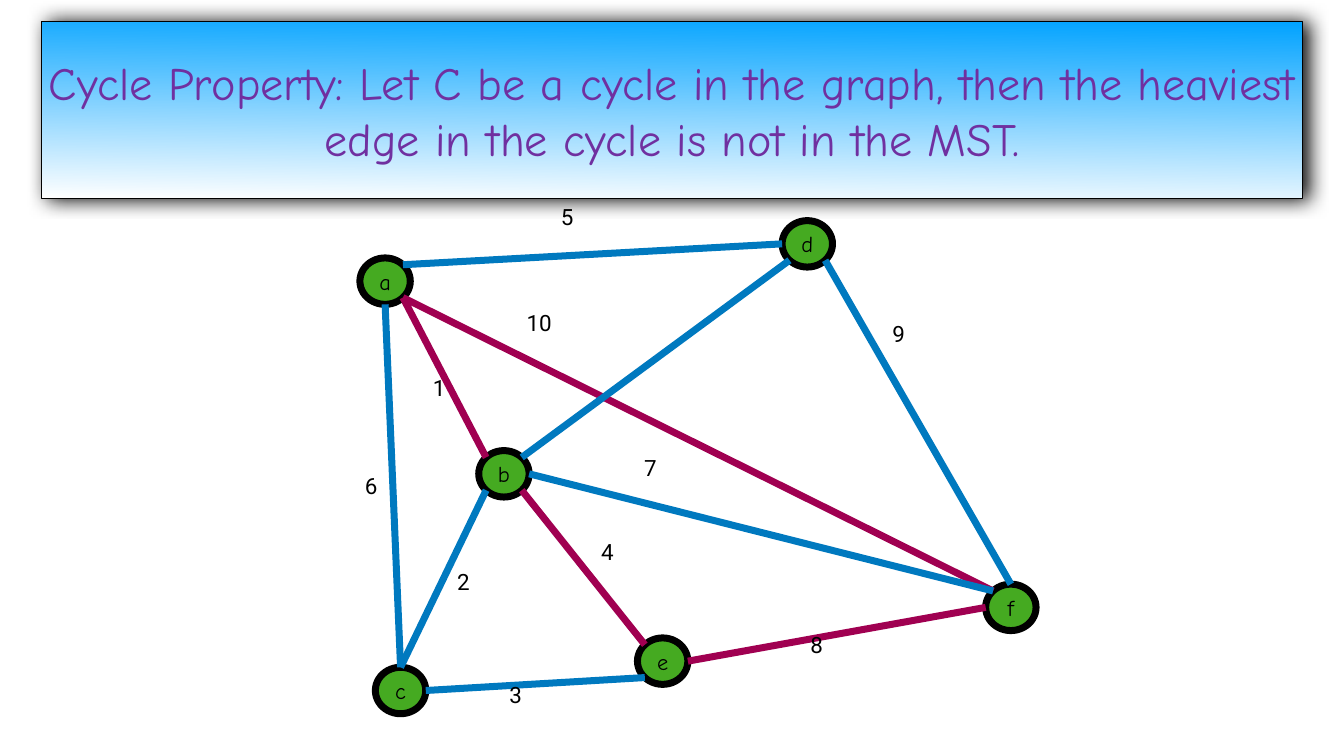
import math
from dataclasses import dataclass

import lxml.etree
import pptx
import pptx.dml.color
import pptx.enum.shapes
import pptx.enum.text
import pptx.oxml.ns
import pptx.util

Cm, Pt = pptx.util.Cm, pptx.util.Pt
RGB = pptx.dml.color.RGBColor.from_string
qn = pptx.oxml.ns.qn
MSO_SHAPE = pptx.enum.shapes.MSO_SHAPE
ALIGN = pptx.enum.text.PP_ALIGN
AUTO_SIZE = pptx.enum.text.MSO_AUTO_SIZE


@dataclass
class Theme:
    black: str = "000000"
    banner_top: str = "00A2FF"
    banner_bottom: str = "FFFFFF"
    title: str = "7030A0"
    node: str = "45AA21"
    edge: str = "0079BF"
    cycle: str = "A00051"
    hand_font: str = "Comic Neue"
    label_font: str = "Roboto"
    title_size: int = 66
    label_size: int = 32
    stroke: int = 10


theme = Theme()


def write(sp, text, font, size, color, align, auto_size):
    tf = sp.text_frame
    tf.text = text
    tf.word_wrap = True
    tf.auto_size = auto_size
    tf.vertical_anchor = pptx.enum.text.MSO_ANCHOR.MIDDLE
    tf.margin_left = tf.margin_right = tf.margin_top = tf.margin_bottom = Cm(0.15)
    p = tf.paragraphs[0]
    p.alignment = align
    p.font.name = font
    p.font.size = Pt(size)
    p.font.color.rgb = RGB(color)
    return p


prs = pptx.Presentation()
prs.slide_width, prs.slide_height = Cm(67.74), Cm(38.1)
s = prs.slides.add_slide(prs.slide_layouts[5])

# Title banner: rounded, gradient-filled, with a soft shadow
sp = s.shapes.title
sp.left, sp.top, sp.width, sp.height = Cm(2.08), Cm(1.07), Cm(63.58), Cm(8.94)
spPr = sp._element.spPr
geom = lxml.etree.SubElement(spPr, qn("a:prstGeom"), prst="roundRect")
guides = lxml.etree.SubElement(geom, qn("a:avLst"))
lxml.etree.SubElement(guides, qn("a:gd"), name="adj", fmla="val 5900")
sp.fill.gradient()
sp.fill.gradient_angle = 269
for stop, color in zip(sp.fill.gradient_stops, (theme.banner_top, theme.banner_bottom)):
    stop.color.rgb = RGB(color)
sp.fill.gradient_stops[0].position = 0
sp.fill.gradient_stops[1].position = 1
sp.line.color.rgb = RGB(theme.black)
sp.line.width = Pt(1)
effects = lxml.etree.SubElement(spPr, qn("a:effectLst"))
shadow = lxml.etree.SubElement(effects, qn("a:outerShdw"), blurRad=str(Pt(28)),
                               dist=str(Pt(9)), dir="0", rotWithShape="0")
tint = lxml.etree.SubElement(shadow, qn("a:srgbClr"), val=theme.black)
lxml.etree.SubElement(tint, qn("a:alpha"), val="97000")
write(sp, "Cycle Property: Let C be a cycle in the graph, then the heaviest "
      "edge in the cycle is not in the MST.",
      theme.hand_font, theme.title_size, theme.title, ALIGN.CENTER, AUTO_SIZE.NONE)

# Nodes, by centre in cm
node_w, node_h = 2.54, 2.34
nodes = {
    "a": (19.41, 14.17), "d": (40.69, 12.29), "b": (25.4, 23.88),
    "c": (20.19, 34.8), "e": (33.4, 33.32), "f": (50.95, 30.61),
}
for name, (x, y) in nodes.items():
    sp = s.shapes.add_shape(MSO_SHAPE.OVAL, Cm(x - node_w / 2), Cm(y - node_h / 2),
                            Cm(node_w), Cm(node_h))
    sp.shadow.inherit = False
    sp.fill.solid()
    sp.fill.fore_color.rgb = RGB(theme.node)
    sp.line.color.rgb = RGB(theme.black)
    sp.line.width = Pt(theme.stroke)
    write(sp, name, theme.hand_font, theme.label_size, theme.black,
          ALIGN.CENTER, AUTO_SIZE.SHAPE_TO_FIT_TEXT)

# Edges join points on the node rims, named by compass direction
compass = {d: math.radians(45 * i)
           for i, d in enumerate(("E", "SE", "S", "SW", "W", "NW", "N", "NE"))}


def rim(name, direction):
    x, y = nodes[name]
    angle = compass[direction]
    return Cm(x + node_w / 2 * math.cos(angle)), Cm(y + node_h / 2 * math.sin(angle))


edges = [
    ("d", "SE", "f", "N", theme.edge),
    ("f", "NW", "a", "SE", theme.cycle),
    ("d", "SW", "b", "NE", theme.edge),
    ("c", "N", "b", "SW", theme.edge),
    ("e", "NW", "b", "SE", theme.cycle),
    ("f", "W", "e", "E", theme.cycle),
    ("b", "NW", "a", "SE", theme.cycle),
    ("d", "W", "a", "NE", theme.edge),
    ("c", "N", "a", "S", theme.edge),
    ("c", "E", "e", "SW", theme.edge),
    ("f", "NW", "b", "E", theme.edge),
]
for start, start_side, end, end_side, color in edges:
    line = s.shapes.add_connector(pptx.enum.shapes.MSO_CONNECTOR.STRAIGHT,
                                  *rim(start, start_side), *rim(end, end_side))
    line.line.color.rgb = RGB(color)
    line.line.width = Pt(theme.stroke)
    lxml.etree.SubElement(line._element.spPr, qn("a:effectLst"))

# Edge weights, by left and top in cm
weights = {
    "5": (28.12, 9.42), "6": (18.24, 23.01), "10": (26.39, 14.76), "9": (44.83, 15.32),
    "1": (21.67, 18.08), "4": (30.15, 26.34), "2": (22.89, 27.81), "7": (32.31, 22.1),
    "8": (40.69, 31.01), "3": (25.53, 33.53),
}
for weight, (x, y) in weights.items():
    width = 1.37 if len(weight) == 1 else 1.78
    sp = s.shapes.add_textbox(Cm(x), Cm(y), Cm(width), Cm(3.12))
    p = write(sp, weight, theme.label_font, theme.label_size, theme.black,
              ALIGN.LEFT, AUTO_SIZE.SHAPE_TO_FIT_TEXT)
    p.line_spacing = 0.9
    p.space_before = Pt(45)

prs.save("out.pptx")
